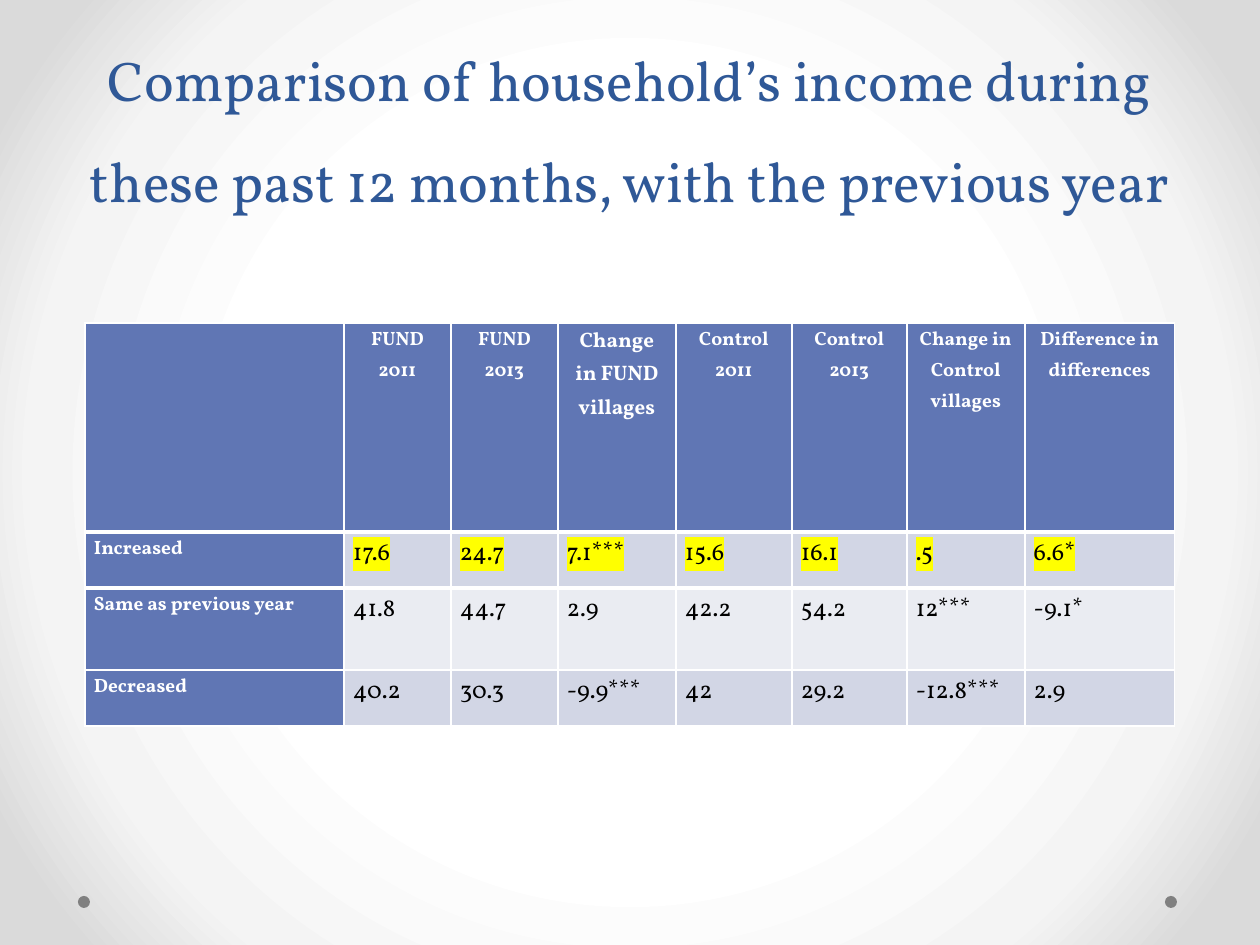
from lxml import etree
from pptx import Presentation, util as u
from pptx.dml.color import RGBColor
from pptx.enum import shapes, text
from pptx.oxml import parse_xml
from pptx.oxml.ns import qn

FONT = "Vollkorn"
NAVY = RGBColor(0x2F, 0x58, 0x97)
BLUE = RGBColor(0x60, 0x76, 0xB4)
BAND = RGBColor(0xD2, 0xD6, 0xE5)
PALE = RGBColor(0xEA, 0xEC, 0xF2)
GRAY = RGBColor(0x80, 0x80, 0x80)
WHITE = RGBColor(0xFF, 0xFF, 0xFF)
BLACK = RGBColor(0, 0, 0)
YELLOW = RGBColor(0xFF, 0xFF, 0)

STOPS = [(50, WHITE), (76, RGBColor(0xF4, 0xF4, 0xF4)), (92, RGBColor(0xDA, 0xDA, 0xDA))]
COLS = [259, 107, 107, 118, 116, 115, 118, 150]
ROWS = [209, 56, 82, 56]
DATA = [
    ["", "FUND 2011", "FUND 2013", "Change in FUND villages", "Control 2011",
     "Control 2013", "Change in Control villages", "Difference in differences"],
    ["Increased", "17.6", "24.7", "7.1***", "15.6", "16.1", ".5", "6.6*"],
    ["Same as previous year", "41.8", "44.7", "2.9", "42.2", "54.2", "12***", "-9.1*"],
    ["Decreased", "40.2", "30.3", "-9.9***", "42", "29.2", "-12.8***", "2.9"],
]


def px(n):
    return u.Emu(round(n * 914400 / 126))


def style(para, size, color, bold=False):
    font = para.font
    font.name, font.size, font.bold = FONT, u.Pt(size), bold
    font.color.rgb = color


prs = Presentation()
prs.slide_width, prs.slide_height = px(1260), px(945)
slide = prs.slides.add_slide(prs.slide_layouts[6])

# Radial background
stops = "".join(f'<a:gs pos="{pos * 1000}"><a:srgbClr val="{color}"/></a:gs>'
                for pos, color in STOPS)
fill = slide.background.fill
fill.gradient()
old = slide.element.find(".//" + qn("a:gradFill"))
old.getparent().replace(old, parse_xml(
    '<a:gradFill xmlns:a="http://schemas.openxmlformats.org/drawingml/2006/main" '
    f'rotWithShape="1"><a:gsLst>{stops}</a:gsLst><a:path path="circle">'
    '<a:fillToRect l="50000" t="50000" r="50000" b="50000"/></a:path></a:gradFill>'))

# Corner dots
for left in (1165, 78):
    dot = slide.shapes.add_shape(shapes.MSO_SHAPE.OVAL, px(left), px(896), px(12), px(12))
    dot.shadow.inherit = False
    dot.fill.solid()
    dot.fill.fore_color.rgb = GRAY
    dot.line.fill.background()

# Title
frame = slide.shapes.add_textbox(px(63), 0, px(1134), px(220)).text_frame
frame.word_wrap = True
frame.vertical_anchor = text.MSO_ANCHOR.BOTTOM
para = frame.paragraphs[0]
para.text = "Comparison of household’s income during these past 12 months, with the previous year"
para.alignment = text.PP_ALIGN.CENTER
para.line_spacing = u.Pt(58)
style(para, 32, NAVY)

# Income table: the default style draws the thin white rules
table = slide.shapes.add_table(len(ROWS), len(COLS), px(85), px(323),
                               px(sum(COLS)), px(sum(ROWS))).table
table.first_col = True
for col, width in zip(table.columns, COLS):
    col.width = px(width)
for row, height in zip(table.rows, ROWS):
    row.height = px(height)

for r, line in enumerate(DATA):
    for c, word in enumerate(line):
        cell = table.cell(r, c)
        head = r == 0 or c == 0
        cell.fill.solid()
        cell.fill.fore_color.rgb = BLUE if head else BAND if r % 2 else PALE
        cell.margin_left = cell.margin_right = px(9)
        cell.margin_top = cell.margin_bottom = 0
        if r < 2:  # thick rule between header and body
            rule = etree.Element(qn("a:lnT" if r else "a:lnB"), w=str(u.Pt(3)))
            ink = etree.SubElement(rule, qn("a:solidFill"))
            etree.SubElement(ink, qn("a:srgbClr"), val=str(WHITE))
            cell._tc.get_or_add_tcPr().insert(0, rule)
        if not word:
            continue
        para = cell.text_frame.paragraphs[0]
        para.text = word
        para.line_spacing = 1.15
        if r == 0:
            para.alignment = text.PP_ALIGN.CENTER
        gap = 0 if "Change" in word or "Diff" in word else 2 if c == 0 else 6
        para.space_before = para.space_after = u.Pt(gap)
        size = 12 if (r, c) == (0, 3) else 11 if head else 14
        style(para, size, WHITE if head else BLACK, head)
        if r == 1 and not head:
            mark = etree.SubElement(para.runs[0].font._element, qn("a:highlight"))
            etree.SubElement(mark, qn("a:srgbClr"), val=str(YELLOW))

prs.save("out.pptx")
